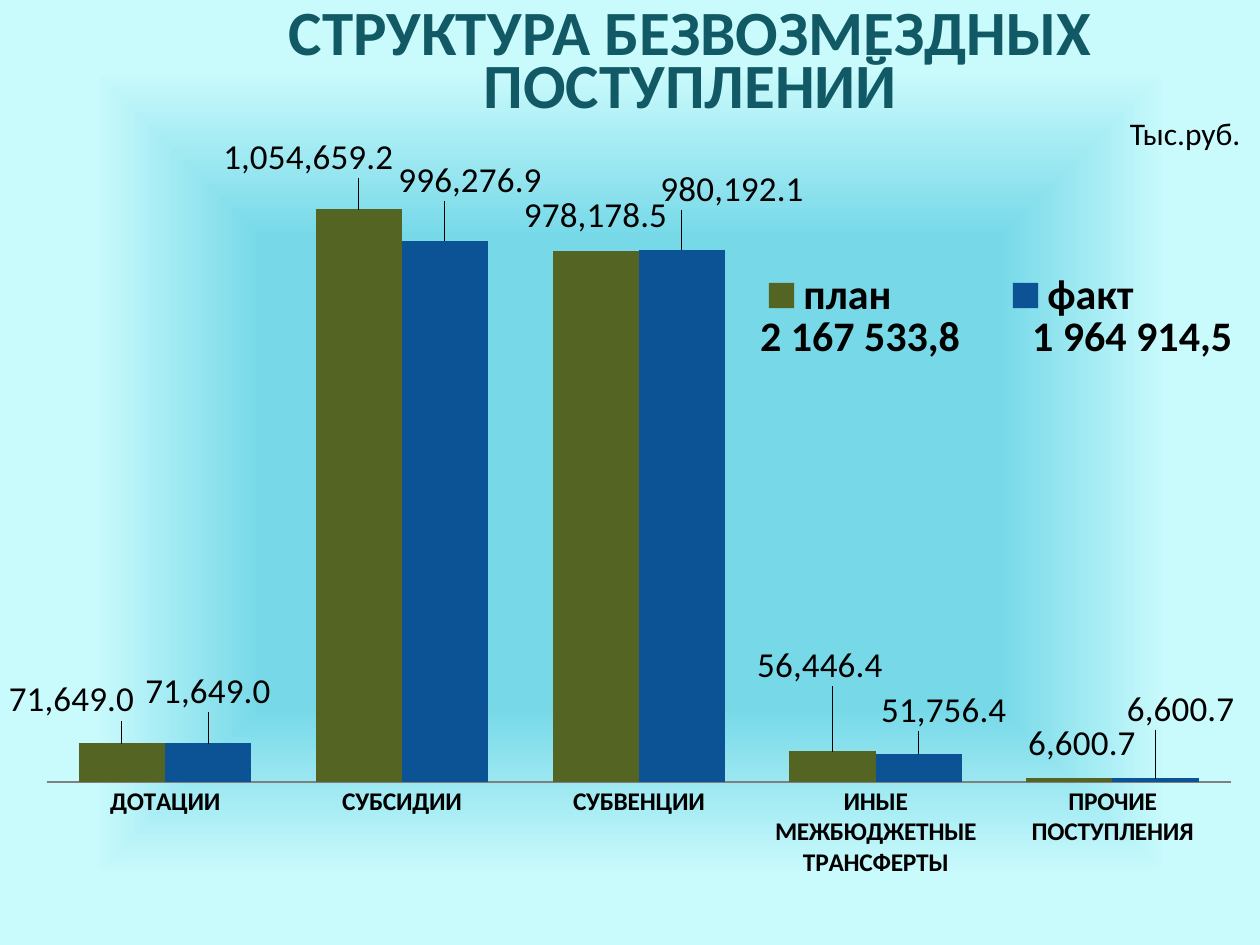
from dataclasses import dataclass

from lxml.etree import SubElement
from pptx import Presentation
from pptx.chart.data import CategoryChartData
from pptx.dml.color import RGBColor
from pptx.enum.chart import XL_CHART_TYPE, XL_LABEL_POSITION, XL_LEGEND_POSITION, XL_TICK_MARK
from pptx.enum.text import MSO_ANCHOR, PP_ALIGN
from pptx.oxml import parse_xml
from pptx.oxml.ns import nsdecls, qn
from pptx.util import Pt


@dataclass(frozen=True)
class Theme:
    ink: str = "000000"
    heading: str = "115964"
    axis: str = "808080"
    glow: str = "77D9E8"
    edge: str = "C9FAFC"
    plan: str = "546422"
    fact: str = "0B5394"
    font: str = "Calibri"
    chart_font: str = "Cambria"
    title_size: float = 36
    total_size: float = 24
    label_size: float = 20
    unit_size: float = 18
    category_size: float = 14.5


THEME = Theme()
NUMBER_FORMAT = "#,##0.0"
CATEGORIES = ["ДОТАЦИИ", "СУБСИДИИ", "СУБВЕНЦИИ",
              "ИНЫЕ МЕЖБЮДЖЕТНЫЕ ТРАНСФЕРТЫ", "ПРОЧИЕ ПОСТУПЛЕНИЯ"]
# Name, colour, values, label shifts as shares of the chart size
SERIES = [
    ("план", THEME.plan, [71649, 1054659.2, 978178.5, 56446.4, 6600.7],
     [(-0.04, -0.02), (-0.04, -0.03), (0, -0.01), (-0.01, -0.07), (0.01, -0.01)]),
    ("факт", THEME.fact, [71649, 996276.9, 980192.1, 51756.4, 6600.7],
     [(0, -0.03), (0.02, -0.04), (0.04, -0.04), (0.02, -0.02), (0.02, -0.05)]),
]


def style_font(font, size, bold=False, color=THEME.ink, name=THEME.font):
    font.size, font.bold, font.name = Pt(size), bold, name
    font.color.rgb = RGBColor.from_string(color)


def add_text(slide, text, left, top, width, height, *, size, bold=False,
             color=THEME.ink, anchor=MSO_ANCHOR.MIDDLE, spacing=None, insets=None):
    box = slide.shapes.add_textbox(Pt(left), Pt(top), Pt(width), Pt(height))
    frame = box.text_frame
    frame.word_wrap = True
    frame.vertical_anchor = anchor
    if insets:
        (frame.margin_left, frame.margin_top,
         frame.margin_right, frame.margin_bottom) = map(Pt, insets)
    paragraph = frame.paragraphs[0]
    paragraph.alignment = PP_ALIGN.CENTER
    paragraph.line_spacing = spacing
    run = paragraph.add_run()
    run.text = text
    style_font(run.font, size, bold, color)


def paint_background(slide):
    fill = slide.background.fill
    fill.gradient()
    gradient = slide.background._cSld.find(".//" + qn("a:gradFill"))
    gradient.getparent().replace(gradient, parse_xml(
        f'<a:gradFill {nsdecls("a")} rotWithShape="1"><a:gsLst>'
        f'<a:gs pos="50000"><a:srgbClr val="{THEME.glow}"/></a:gs>'
        f'<a:gs pos="85000"><a:srgbClr val="{THEME.edge}"/></a:gs></a:gsLst>'
        '<a:path path="shape"><a:fillToRect l="50000" t="50000" r="50000" b="50000"/>'
        '</a:path></a:gradFill>'))


def make_layout(x, y, width=None, height=None, inner=False):
    layout = parse_xml(f'<c:layout {nsdecls("c")}><c:manualLayout/></c:layout>')
    settings = [("layoutTarget", "inner")] if inner else []
    if width is not None:
        settings += [("xMode", "edge"), ("yMode", "edge")]
    settings += [("x", x), ("y", y)]
    if width is not None:
        settings += [("w", width), ("h", height)]
    for tag, value in settings:
        SubElement(layout[0], qn(f"c:{tag}")).set("val", str(value))
    return layout


def set_layout(parent, layout, after):
    for old in parent.findall(qn("c:layout")):
        parent.remove(old)
    if after is None:
        parent.insert(0, layout)
    else:
        parent.find(qn(after)).addnext(layout)


def style_series(series, color, shifts):
    series.format.fill.solid()
    series.format.fill.fore_color.rgb = RGBColor.from_string(color)
    labels = series.data_labels
    labels.show_value = True
    labels.number_format = NUMBER_FORMAT
    labels.number_format_is_linked = False
    style_font(labels.font, THEME.label_size)
    for index in range(len(shifts)):
        label = series.points[index].data_label
        style_font(label.font, THEME.label_size)
        label.position = XL_LABEL_POSITION.OUTSIDE_END
    for element, shift in zip(series._element.iter(qn("c:dLbl")), shifts):
        set_layout(element, make_layout(*shift), "c:idx")
        element.find(qn("c:layout")).addnext(parse_xml(
            f'<c:numFmt {nsdecls("c")} formatCode="{NUMBER_FORMAT}" sourceLinked="0"/>'))


def add_receipts_chart(slide):
    data = CategoryChartData(number_format=NUMBER_FORMAT)
    data.categories = CATEGORIES
    for name, _, values, _ in SERIES:
        data.add_series(name, values)
    chart = slide.shapes.add_chart(XL_CHART_TYPE.COLUMN_CLUSTERED, Pt(0), Pt(50.4),
                                   Pt(720), Pt(489.6), data).chart
    style_font(chart.font, THEME.unit_size, name=THEME.chart_font)
    chart.has_title = False

    # Columns and their labels
    plot = chart.plots[0]
    plot.gap_width, plot.overlap = 75, 0
    plot.vary_by_categories = False
    for series, (_, color, _, shifts) in zip(plot.series, SERIES):
        style_series(series, color, shifts)
    plot_area = chart._chartSpace.find(".//" + qn("c:plotArea"))
    set_layout(plot_area, make_layout(0.037, 0.049, 0.94, 0.761, inner=True), None)

    # Axes
    categories, amounts = chart.category_axis, chart.value_axis
    categories.major_tick_mark = categories.minor_tick_mark = XL_TICK_MARK.NONE
    style_font(categories.tick_labels.font, THEME.category_size, bold=True)
    categories.format.line.color.rgb = RGBColor.from_string(THEME.axis)
    amounts.minimum_scale, amounts.maximum_scale = 0, 1200000
    amounts.has_major_gridlines = False
    amounts.visible = False

    # Legend above the two totals
    chart.has_legend = True
    legend = chart.legend
    legend.position = XL_LEGEND_POSITION.BOTTOM
    legend.include_in_layout = False
    style_font(legend.font, THEME.total_size, bold=True)
    set_layout(legend._element, make_layout(0.525, 0.207, 0.46, 0.07), "c:legendPos")


def main():
    deck = Presentation()
    deck.slide_width, deck.slide_height = Pt(720), Pt(540)
    slide = deck.slides.add_slide(deck.slide_layouts[6])
    paint_background(slide)

    # Totals and unit
    add_text(slide, "2 167 533,8", 422, 180, 139, 22, size=THEME.total_size, bold=True)
    add_text(slide, "1 964 914,5", 574, 180, 146, 22, size=THEME.total_size, bold=True)
    add_text(slide, "Тыс.руб.", 633, 67.7, 88.5, 16.5, size=THEME.unit_size)

    # Title
    add_text(slide, "СТРУКТУРА БЕЗВОЗМЕЗДНЫХ ПОСТУПЛЕНИЙ", 60, 3, 669, 65,
             size=THEME.title_size, bold=True, color=THEME.heading,
             anchor=MSO_ANCHOR.BOTTOM, spacing=0.7, insets=(0, 3.6, 0, 0))

    add_receipts_chart(slide)
    deck.save("out.pptx")


if __name__ == "__main__":
    main()
